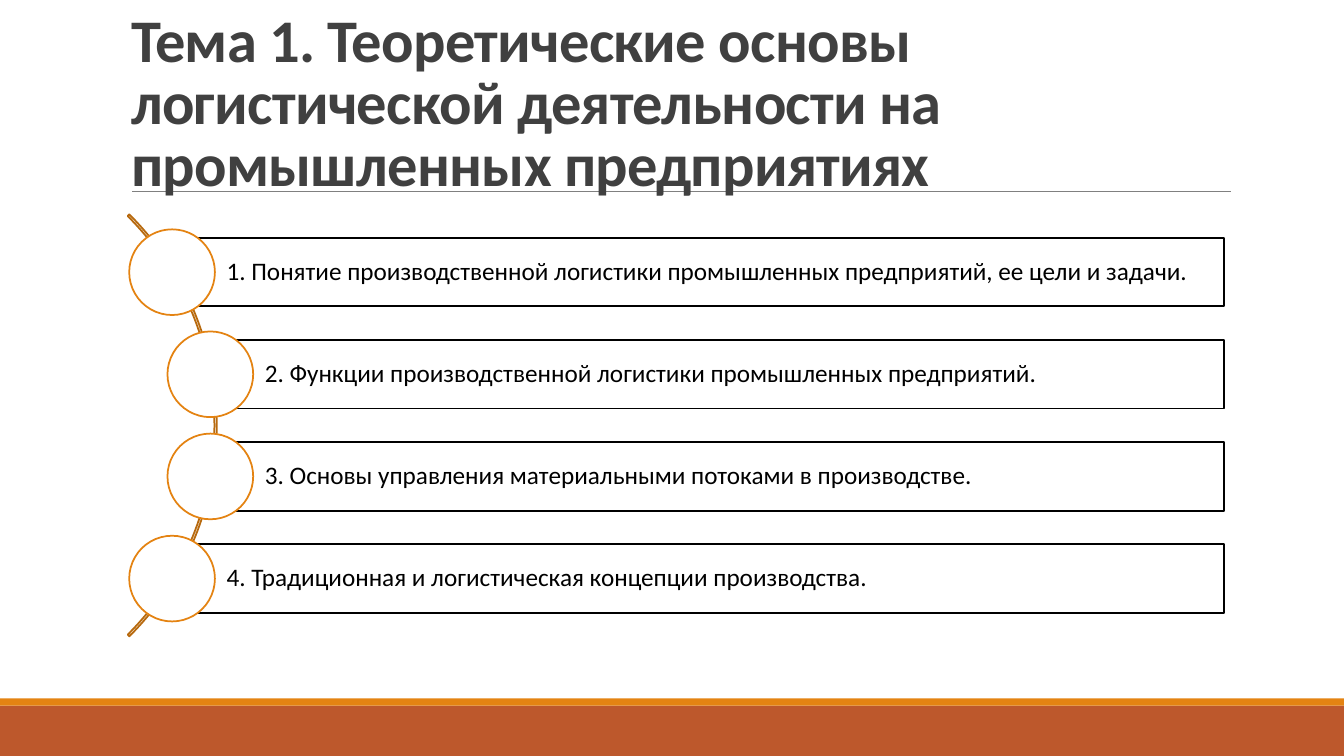
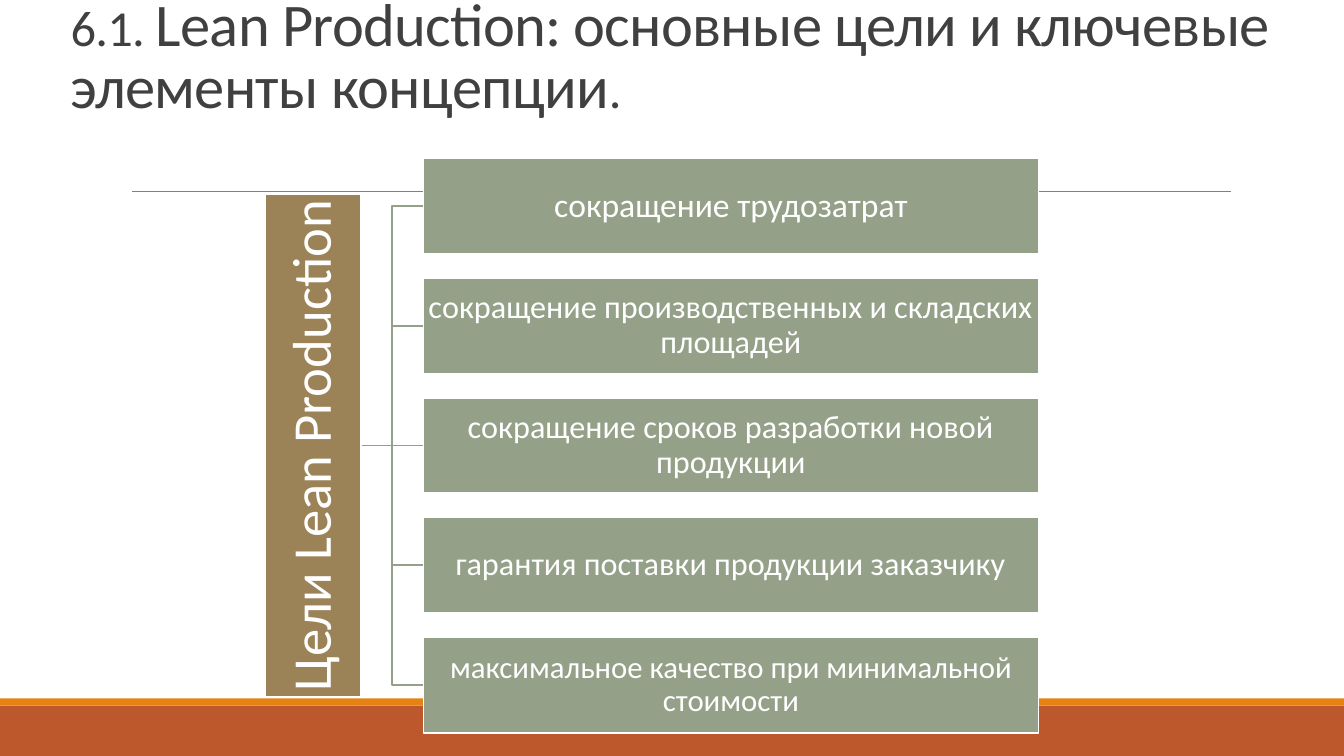
from dataclasses import dataclass
from math import sqrt

from lxml import etree
from pptx import Presentation
from pptx.dml.color import RGBColor as Rgb
from pptx.enum.shapes import MSO_CONNECTOR as Conn, MSO_SHAPE as Kind
from pptx.enum.text import MSO_ANCHOR as Anchor, MSO_AUTO_SIZE as Fit, PP_ALIGN as Align
from pptx.oxml.ns import qn
from pptx.util import Inches, Pt

WIDE, HIGH = 13.33, 7.5
FONT = "Calibri"
HUES = {
    "band": "BD582C", "strip": "E48312", "rule": "808080", "title": "404040",
    "arc": "B7690E", "root": "9B8357", "leaf": "94A088",
    "white": "FFFFFF", "black": "000000",
}


@dataclass
class Box:
    left: float
    top: float
    width: float
    height: float


@dataclass
class Label:
    text: str
    size: float
    hue: str = "white"
    align: Align = Align.CENTER
    pad: float = 0.02
    indent: float = 0.02


@dataclass
class Part:
    text: str
    size: float
    bold: bool = False


def color(name: str) -> Rgb:
    return Rgb.from_string(HUES[name])


# Basic pieces
def style(shape, fill: str | None, line: str | None) -> None:
    shape.shadow.inherit = False
    if fill:
        shape.fill.solid()
        shape.fill.fore_color.rgb = color(fill)
    else:
        shape.fill.background()
    if line:
        shape.line.color.rgb = color(line)
        shape.line.width = Pt(1.25)
    else:
        shape.line.fill.background()


def add_box(slide, box: Box, fill: str | None, line: str | None = None, kind=Kind.RECTANGLE):
    shape = slide.shapes.add_shape(
        kind, Inches(box.left), Inches(box.top), Inches(box.width), Inches(box.height))
    style(shape, fill, line)
    return shape


def add_line(slide, x1: float, y1: float, x2: float, y2: float, hue: str, width: float) -> None:
    line = slide.shapes.add_connector(
        Conn.STRAIGHT, Inches(x1), Inches(y1), Inches(x2), Inches(y2))
    line.line.color.rgb = color(hue)
    line.line.width = Pt(width)
    etree.SubElement(line._element.spPr, qn("a:effectLst"))


def write(shape, label: Label) -> None:
    frame = shape.text_frame
    frame.word_wrap = True
    frame.vertical_anchor = Anchor.MIDDLE
    frame.margin_left = Inches(label.indent)
    frame.margin_right = frame.margin_top = frame.margin_bottom = Inches(label.pad)
    para = frame.paragraphs[0]
    para.text = label.text
    para.alignment = label.align
    para.line_spacing = 0.9
    para.font.name = FONT
    para.font.size = Pt(label.size)
    para.font.color.rgb = color(label.hue)


# Shared frame: bands, rule and title
def new_slide(deck, box: Box, parts: list[Part]):
    slide = deck.slides.add_slide(deck.slide_layouts[5])
    add_box(slide, Box(0, 7, WIDE, 0.5), "band")
    add_box(slide, Box(0, 6.93, WIDE, 0.07), "strip")
    add_line(slide, 1.31, 1.9, 12.21, 1.9, "rule", 0.5)

    title = slide.shapes.title
    slide.shapes._spTree.append(title._element)
    title.left, title.top = Inches(box.left), Inches(box.top)
    title.width, title.height = Inches(box.width), Inches(box.height)
    frame = title.text_frame
    frame.word_wrap = True
    frame.auto_size = Fit.NONE
    frame.vertical_anchor = Anchor.BOTTOM
    para = frame.paragraphs[0]
    para.alignment = Align.LEFT
    para.line_spacing = 0.85
    para.font.name = FONT
    para.font.color.rgb = color("title")
    for part in parts:
        run = para.add_run()
        run.text = part.text
        run.font.size = Pt(part.size)
        run.font.bold = part.bold
        run._r.get_or_add_rPr().set("spc", "-50")
    return slide


# Topics strung along an arc
def add_topics(slide, topics: list[str]) -> None:
    mid_x, mid_y, radius = -0.81, 4.22, 2.96
    arc = add_box(slide, Box(mid_x - radius, mid_y - radius, 2 * radius, 2 * radius),
                  None, "arc", Kind.BLOCK_ARC)
    for i, value in enumerate((189, 27, 0.004)):
        arc.adjustments[i] = value

    first, last, right = 2.7, 5.74, 12.14
    tall, dot = 0.68, 0.85
    step = (last - first) / (len(topics) - 1)
    for i, text in enumerate(topics):
        y = first + i * step
        x = mid_x + sqrt(2.94 ** 2 - (y - mid_y) ** 2)
        bar = add_box(slide, Box(x, y - tall / 2, right - x, tall), "white", "black")
        write(bar, Label(text, 18, "black", Align.LEFT, 0.05, 0.54))
        add_box(slide, Box(x - dot / 2, y - dot / 2, dot, dot), "white", "strip", Kind.OVAL)


# Tree of goals
def add_goals(slide, root: Label, goals: list[Label]) -> None:
    tall, wide, long = 0.95, 6.1, 4.99
    mid, start, end = 4.42, 3.58, 4.2
    bend = (start + end) / 2
    half = len(goals) // 2
    rows = [mid + (i - half) * tall * 1.25 for i in range(len(goals))]

    for y in rows:
        if y == mid:
            add_line(slide, start, mid, end, mid, "leaf", 1.25)
            continue
        path = slide.shapes.build_freeform(Inches(start), Inches(mid))
        turns = [(bend, mid), (bend, y), (end, y)]
        path.add_line_segments([(Inches(a), Inches(b)) for a, b in turns], close=False)
        style(path.convert_to_shape(), None, "leaf")

    trunk = add_box(slide, Box(start - (tall + long) / 2, mid - tall / 2, long, tall),
                    "root", "white")
    trunk.rotation = 270
    write(trunk, root)
    for y, goal in zip(rows, goals):
        write(add_box(slide, Box(end, y - tall / 2, wide, tall), "leaf", "white"), goal)


def main() -> None:
    deck = Presentation()
    deck.slide_width, deck.slide_height = Inches(WIDE), Inches(HIGH)

    slide = new_slide(deck, Box(1.2, 0.43, 11, 1.59), [
        Part("Тема 1. Теоретические основы логистической деятельности "
             "на промышленных предприятиях", 43.2, True),
    ])
    add_topics(slide, [
        "1. Понятие производственной логистики промышленных предприятий, ее цели и задачи.",
        "2. Функции производственной логистики промышленных предприятий.",
        "3. Основы управления материальными потоками в производстве.",
        "4. Традиционная и логистическая концепции производства.",
    ])

    slide = new_slide(deck, Box(0.6, 0.33, 12.57, 0.92), [
        Part("6.1. ", 36),
        Part("Lean Production: основные цели и ключевые элементы концепции", 43.2),
        Part(".", 36),
    ])
    add_goals(slide, Label("Цели Lean Production ", 39, pad=0.03, indent=0.03), [
        Label("сокращение трудозатрат", 24),
        Label("сокращение производственных и складских площадей", 23),
        Label("сокращение сроков разработки новой продукции", 23),
        Label("гарантия поставки продукции заказчику", 23),
        Label("максимальное качество при минимальной стоимости", 22),
    ])
    deck.save("out.pptx")


if __name__ == "__main__":
    main()
